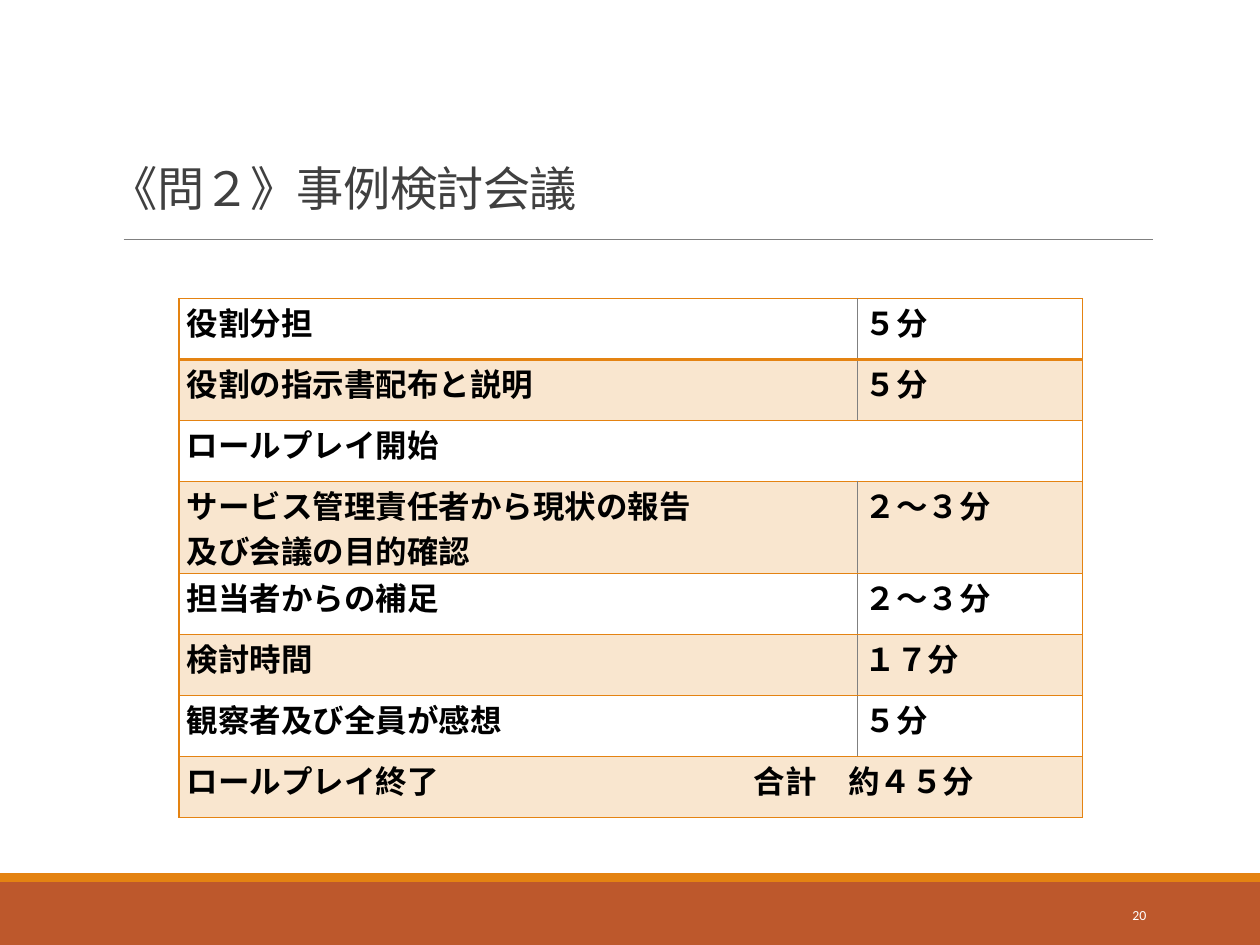
from pptx import Presentation
from pptx.dml.color import RGBColor as RGB
from pptx.enum.shapes import MSO_CONNECTOR as CONN, MSO_SHAPE as SHAPE
from pptx.enum.text import MSO_ANCHOR as ANCHOR, PP_ALIGN as ALIGN
from pptx.oxml.ns import qn
from pptx.util import Cm, Pt
from lxml.etree import SubElement

C = {"rust": "BD582C", "orange": "E48312", "gray": "808080",
     "title": "404040", "black": "000000", "white": "FFFFFF"}
JP = "Noto Sans CJK JP"


def add_run(p, text, size, color, font=JP, bold=False):
    r = p.add_run()
    r.text = text
    r.font.size = Pt(size)
    r.font.bold = bold
    r.font.color.rgb = RGB.from_string(C[color])
    r.font.name = font
    SubElement(r.font._element, qn("a:ea"), typeface=font)
    return r


def add_border(cell, side, color, width):
    ln = SubElement(cell._tc.get_or_add_tcPr(), qn("a:ln" + side), w=str(Pt(width)))
    fill = SubElement(ln, qn("a:solidFill"))
    SubElement(fill, qn("a:srgbClr"), val=C[color])


prs = Presentation()
prs.slide_width, prs.slide_height = Cm(25.4), Cm(19.05)
s = prs.slides.add_slide(prs.slide_layouts[6])

for top, height, color in [(17.78, 1.27, "rust"), (17.6, 0.18, "orange")]:
    sp = s.shapes.add_shape(SHAPE.RECTANGLE, 0, Cm(top), Cm(25.4), Cm(height))
    sp.shadow.inherit = False
    sp.fill.solid()
    sp.fill.fore_color.rgb = RGB.from_string(C[color])
    sp.line.fill.background()

rule = s.shapes.add_connector(CONN.STRAIGHT, Cm(2.49), Cm(4.83), Cm(23.24), Cm(4.83))
rule.line.color.rgb = RGB.from_string(C["gray"])
rule.line.width = Pt(0.5)
SubElement(rule._element.spPr, qn("a:effectLst"))

texts = [
    (1.98, 2.62, 21.49, 1.85, ANCHOR.BOTTOM, ALIGN.LEFT, "《問２》事例検討会議", 27, "title", JP, -40),
    (20.62, 17.93, 2.74, 1.02, ANCHOR.MIDDLE, ALIGN.RIGHT, "20", 7.9, "white", "Calibri", 0),
]
for x, y, w, h, anchor, align, text, size, color, font, spacing in texts:
    tf = s.shapes.add_textbox(Cm(x), Cm(y), Cm(w), Cm(h)).text_frame
    tf.word_wrap = True
    tf.vertical_anchor = anchor
    p = tf.paragraphs[0]
    p.alignment = align
    r = add_run(p, text, size, color, font)
    r.font._element.set("spc", str(spacing))

rows = [
    (["役割分担"], "５分"),
    (["役割の指示書配布と説明"], "５分"),
    (["ロールプレイ開始"], None),
    (["サービス管理責任者から現状の報告", "及び会議の目的確認"], "２〜３分"),
    (["担当者からの補足"], "２〜３分"),
    (["検討時間"], "１７分"),
    (["観察者及び全員が感想"], "５分"),
    (["ロールプレイ終了\t合計　約４５分"], None),
]
tbl = s.shapes.add_table(len(rows), 2, Cm(3.61), Cm(6.02), Cm(18.21), Cm(10.44)).table
tbl.first_row = tbl.horz_banding = False
tbl.columns[0].width, tbl.columns[1].width = Cm(13.67), Cm(4.54)

for i, (lines, minutes) in enumerate(rows):
    tbl.rows[i].height = Cm(1.85 if len(lines) > 1 else 1.23)
    if minutes is None:
        tbl.cell(i, 0).merge(tbl.cell(i, 1))
    for j, content in enumerate([lines, [minutes] if minutes else []]):
        cell = tbl.cell(i, j)
        cell.margin_left = cell.margin_right = Cm(0.15)
        cell.margin_top = cell.margin_bottom = 0
        inner = ("gray", 0.5) if minutes else ("orange", 1)
        add_border(cell, "L", *(inner if j else ("orange", 1)))
        add_border(cell, "R", *(("orange", 1) if j else inner))
        add_border(cell, "T", "orange", 2 if i == 1 else 1)
        add_border(cell, "B", "orange", 2 if i == 0 else 1)
        if i % 2:
            cell.fill.solid()
            cell.fill.fore_color.rgb = RGB.from_string(C["orange"])
            clr = cell._tc.tcPr.find(qn("a:solidFill")).find(qn("a:srgbClr"))
            SubElement(clr, qn("a:alpha"), val="20000")
        else:
            cell.fill.background()
        tf = cell.text_frame
        for k, line in enumerate(content):
            p = tf.add_paragraph() if k else tf.paragraphs[0]
            p.alignment = ALIGN.JUSTIFY
            if "\t" in line:
                tabs = SubElement(p._p.get_or_add_pPr(), qn("a:tabLst"))
                SubElement(tabs, qn("a:tab"), pos=str(Cm(11.43)), algn="l")
            add_run(p, line, 18, "black", bold=True)

prs.save("out.pptx")
